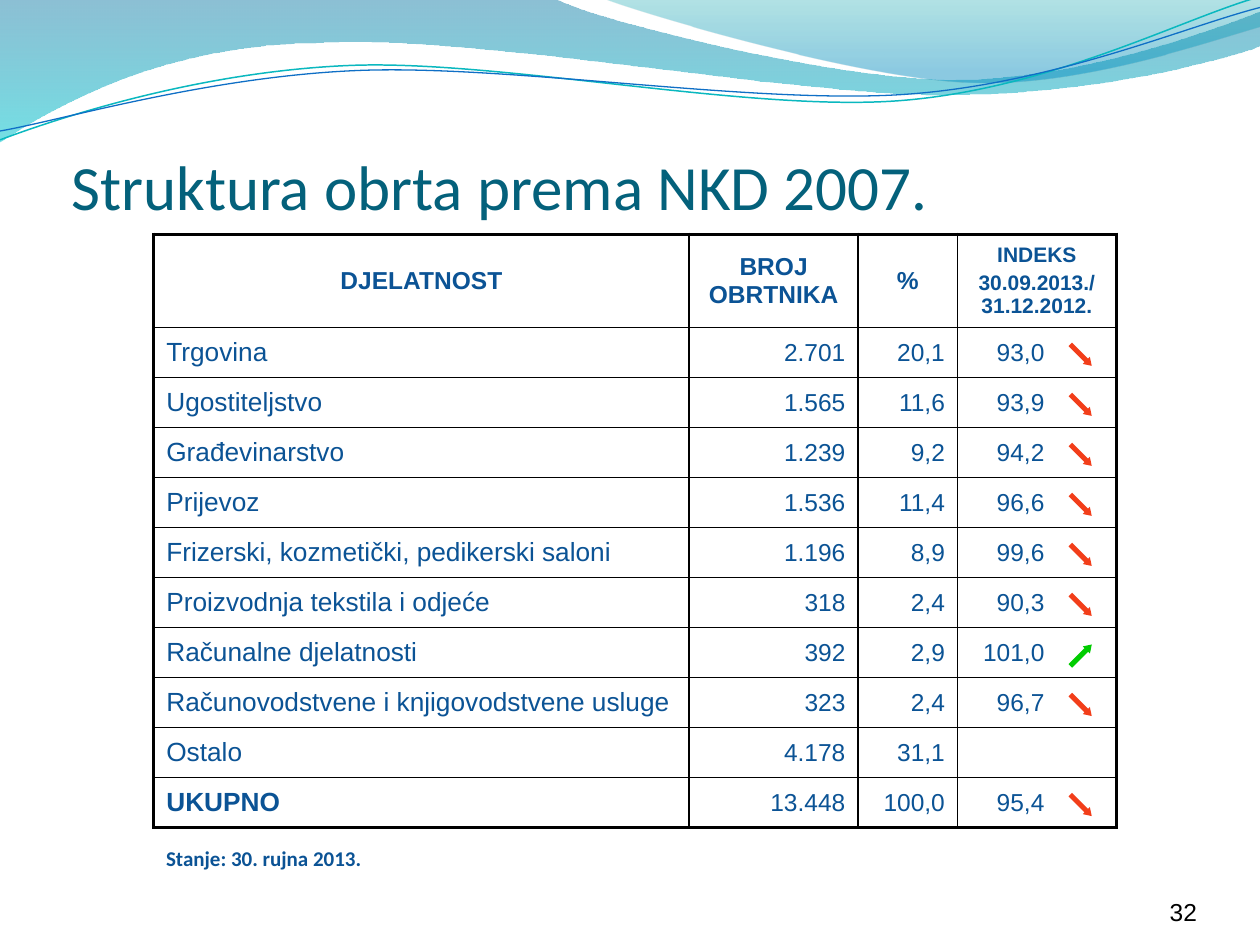
import math

import pptx
import pptx.util
import pptx.dml.color
import pptx.enum.shapes
import pptx.enum.text
import pptx.oxml.ns
from lxml import etree

Inches, Pt, qn = pptx.util.Inches, pptx.util.Pt, pptx.oxml.ns.qn
ALIGN = pptx.enum.text.PP_ALIGN
ANCHOR = pptx.enum.text.MSO_ANCHOR
ARROW = pptx.enum.shapes.MSO_SHAPE

# Content
TITLE = "Struktura obrta prema NKD 2007."
NOTE = "Stanje: 30. rujna 2013."
PAGE = "32"
HEADER = ["DJELATNOST", "BROJ OBRTNIKA", "%", "INDEKS\n30.09.2013./ 31.12.2012.", ""]
TRADES = [  # activity, craftsmen, share, index, trend
    ("Trgovina", "2.701", "20,1", "93,0", "down"),
    ("Ugostiteljstvo", "1.565", "11,6", "93,9", "down"),
    ("Građevinarstvo", "1.239", "9,2", "94,2", "down"),
    ("Prijevoz", "1.536", "11,4", "96,6", "down"),
    ("Frizerski, kozmetički, pedikerski saloni", "1.196", "8,9", "99,6", "down"),
    ("Proizvodnja tekstila i odjeće", "318", "2,4", "90,3", "down"),
    ("Računalne djelatnosti", "392", "2,9", "101,0", "up"),
    ("Računovodstvene i knjigovodstvene usluge", "323", "2,4", "96,7", "down"),
    ("Ostalo", "4.178", "31,1", "", None),
    ("UKUPNO", "13.448", "100,0", "95,4", "down"),
]
TRENDS = {"down": (ARROW.DOWN_ARROW, 315, "F23E1A"), "up": (ARROW.UP_ARROW, 45, "00CC00")}

# Wave outlines in inches: one point is a straight step, three are a Bezier curve
BANDS = [
    ([[(0, -0.01)], [(4.4, -0.01)], [(4.76, 0.17), (6.64, 0.63), (7.58, 0.63)],
      [(8.53, 0.63), (9.58, 0.26), (10, 0.09)], [(10.01, 0.36)],
      [(9.83, 0.44), (8.7, 0.76), (7.46, 0.75)], [(6.22, 0.75), (3.82, 0.28), (2.57, 0.34)],
      [(1.29, 0.35), (0.46, 0.83), (-0.01, 1.13)]],
     [(0, "0074A1", 45), (1, "00C6CF", 55)]),
    ([[(4.79, -0.01)], [(5.09, 0.11), (6.82, 0.62), (7.69, 0.65)],
      [(8.56, 0.69), (9.61, 0.32), (10, 0.21)], [(10, 0)]],
     [(0, "00A1A9", 30), (0.8, "008BBF", 45)]),
]
STRANDS = [
    ([[(0, 1.11)], [(0.48, 0.93), (1.58, 0.57), (2.77, 0.52)],
      [(3.95, 0.47), (5.93, 0.89), (7.13, 0.8)], [(8.33, 0.71), (9.38, 0.15), (9.98, -0.02)]],
     "0AB8BF", 0.85),
    ([[(0, 1.04)], [(0.47, 0.96), (1.64, 0.61), (2.83, 0.56)],
      [(4.03, 0.51), (5.97, 0.83), (7.17, 0.75)], [(8.36, 0.67), (9.41, 0.21), (10, 0.06)]],
     "0F6FC6", 0.75),
]
STRAND_TILT = -2.7
STRAND_CENTRE = (5, 0.58)
UNITS = 1000  # outline units per inch

# Layout in inches
TABLE_LEFT, TABLE_TOP, TABLE_HEIGHT = 1.22, 1.86, 4.71
COLUMNS = [4.25, 1.34, 0.79, 0.79, 0.47]
HEADER_HEIGHT = 0.74
ROW_HEIGHT = (TABLE_HEIGHT - HEADER_HEIGHT) / len(TRADES)
ARROW_X, ARROW_WIDTH, ARROW_HEIGHT = 8.58, 0.08, 0.24
INK = "0B5395"


def colour(value):
    return pptx.dml.color.RGBColor.from_string(value)


def level(point):
    """Turn a strand's point back to where it lies before the tilt."""
    angle = math.radians(-STRAND_TILT)
    dx, dy = (p - c for p, c in zip(point, STRAND_CENTRE))
    return (STRAND_CENTRE[0] + dx * math.cos(angle) - dy * math.sin(angle),
            STRAND_CENTRE[1] + dx * math.sin(angle) + dy * math.cos(angle))


def add_wave(slide, steps, close):
    points = [(x * UNITS, y * UNITS) for step in steps for x, y in step]
    builder = slide.shapes.build_freeform(*points[0], scale=Inches(1) / UNITS)
    builder.add_line_segments(points[1:], close=close)
    wave = builder.convert_to_shape()
    wave.shadow.inherit = False
    # Join each three straight steps of a curve into one Bezier step
    lines = iter(list(wave._element.iter(qn("a:lnTo"))))
    for step in steps[1:]:
        parts = [next(lines) for _ in step]
        if len(parts) == 3:
            curve = etree.Element(qn("a:cubicBezTo"))
            parts[0].addprevious(curve)
            for part in parts:
                curve.append(part[0])
                part.getparent().remove(part)
    return wave


def style(frame, size, font="Arial", ink=INK, bold=False, align=ALIGN.LEFT):
    for paragraph in frame.paragraphs:
        paragraph.alignment = align
        for run in paragraph.runs:
            run.font.size, run.font.name, run.font.bold = Pt(size), font, bold
            run.font.color.rgb = colour(ink)


def add_text(slide, text, box, margins, anchor, **look):
    frame = slide.shapes.add_textbox(*map(Inches, box)).text_frame
    frame.word_wrap = True
    frame.vertical_anchor = anchor
    (frame.margin_left, frame.margin_top,
     frame.margin_right, frame.margin_bottom) = map(Inches, margins)
    frame.text = text
    style(frame, **look)


def set_borders(cell, widths):
    properties = cell._tc.get_or_add_tcPr()
    for place, (side, width) in enumerate(zip("LRTB", widths)):
        line = etree.Element(qn("a:ln" + side), w=str(Pt(width)))
        if width:
            fill = etree.SubElement(line, qn("a:solidFill"))
            etree.SubElement(fill, qn("a:srgbClr"), val="000000")
        else:
            etree.SubElement(line, qn("a:noFill"))
        properties.insert(place, line)


def add_trades(slide):
    rows = [HEADER] + [trade[:4] + ("",) for trade in TRADES]
    last_row, last_col = len(rows) - 1, len(COLUMNS) - 1
    table = slide.shapes.add_table(
        len(rows), len(COLUMNS), Inches(TABLE_LEFT), Inches(TABLE_TOP),
        Inches(sum(COLUMNS)), Inches(TABLE_HEIGHT)).table
    table.first_row = table.horz_banding = False
    for column, width in zip(table.columns, COLUMNS):
        column.width = Inches(width)
    for r, texts in enumerate(rows):
        table.rows[r].height = Inches(ROW_HEIGHT if r else HEADER_HEIGHT)
        for c, text in enumerate(texts):
            cell = table.cell(r, c)
            cell.fill.background()
            cell.vertical_anchor = ANCHOR.MIDDLE
            if text:
                cell.text_frame.text = text
            else:
                cell.margin_top = cell.margin_bottom = 0
            if r == 0:
                style(cell.text_frame, 12 if c == 3 else 14, bold=True, align=ALIGN.CENTER)
            elif c == 0:
                style(cell.text_frame, 15, bold=r == last_row)
            else:
                style(cell.text_frame, 14, align=ALIGN.RIGHT)
            set_borders(cell, (
                2.25 if c == 0 else 0 if c == last_col else 1,
                2.25 if c == last_col or (r == 0 and c == 3) else 0 if c == 3 else 1,
                2.25 if r == 0 else 1,
                2.25 if r == last_row else 1))
    table.cell(0, 3).merge(table.cell(0, 4))
    table.cell(0, 3).text_frame.paragraphs[1].space_before = Pt(2.4)


def add_trends(slide):
    for row, trade in enumerate(TRADES):
        if trade[4] is None:
            continue
        kind, turn, fill = TRENDS[trade[4]]
        middle = TABLE_TOP + HEADER_HEIGHT + (row + 0.5) * ROW_HEIGHT + 0.02
        arrow = slide.shapes.add_shape(
            kind, Inches(ARROW_X - ARROW_WIDTH / 2), Inches(middle - ARROW_HEIGHT / 2),
            Inches(ARROW_WIDTH), Inches(ARROW_HEIGHT))
        arrow.adjustments[0], arrow.adjustments[1] = 0.5, 0.76
        arrow.rotation = turn
        arrow.shadow.inherit = False
        arrow.fill.solid()
        arrow.fill.fore_color.rgb = colour(fill)
        arrow.line.fill.background()


def main():
    deck = pptx.Presentation()
    deck.slide_width, deck.slide_height = Inches(10), Inches(7.5)
    slide = deck.slides.add_slide(deck.slide_layouts[6])

    # Waves along the top
    for steps, stops in BANDS:
        band = add_wave(slide, steps, True)
        band.line.fill.background()
        band.fill.gradient()
        band.fill.gradient_angle = 270
        for stop, (position, tone, opacity) in zip(band.fill.gradient_stops, stops):
            stop.position = position
            stop.color.rgb = colour(tone)
            tint = stop._gs.find(qn("a:srgbClr"))
            etree.SubElement(tint, qn("a:alpha"), val=str(opacity * 1000))
    for steps, tone, width in STRANDS:
        strand = add_wave(slide, [[level(point) for point in step] for step in steps], False)
        strand.rotation = STRAND_TILT
        strand.fill.background()
        strand.line.color.rgb = colour(tone)
        strand.line.width = Pt(width)

    # Page number, title, table with trends, date note
    add_text(slide, PAGE, (8.67, 6.95, 0.83, 0.4), (0, 0, 0, 0), ANCHOR.BOTTOM,
             size=14, ink="000000", align=ALIGN.RIGHT)
    add_text(slide, TITLE, (0.57, 0.84, 9, 0.93), (0, 0.05, 0, 0), ANCHOR.BOTTOM,
             size=36, font="Calibri", ink="04617B")
    add_trades(slide)
    add_text(slide, NOTE, (TABLE_LEFT, 6.66, 6.34, 0.6), (0.1, 0.05, 0.1, 0.05),
             ANCHOR.TOP, size=12, font="Calibri", bold=True)
    add_trends(slide)
    deck.save("out.pptx")


if __name__ == "__main__":
    main()
